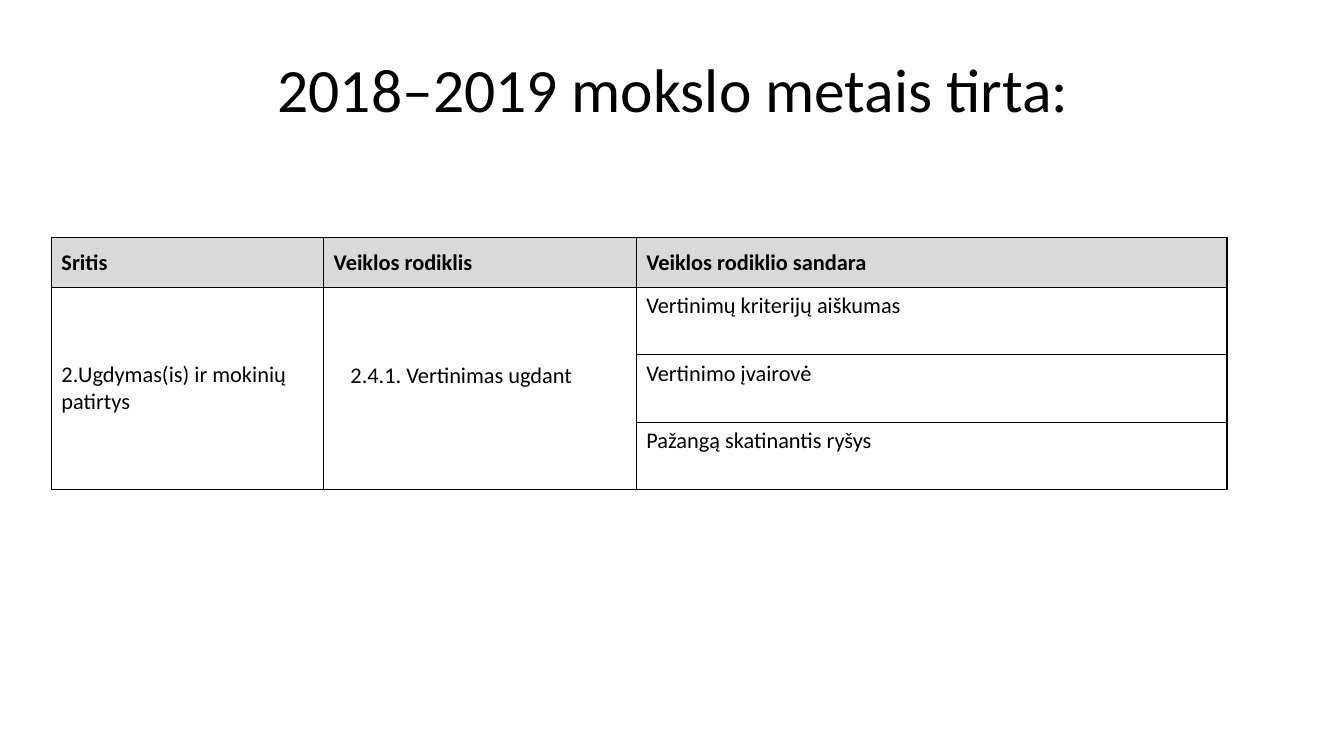
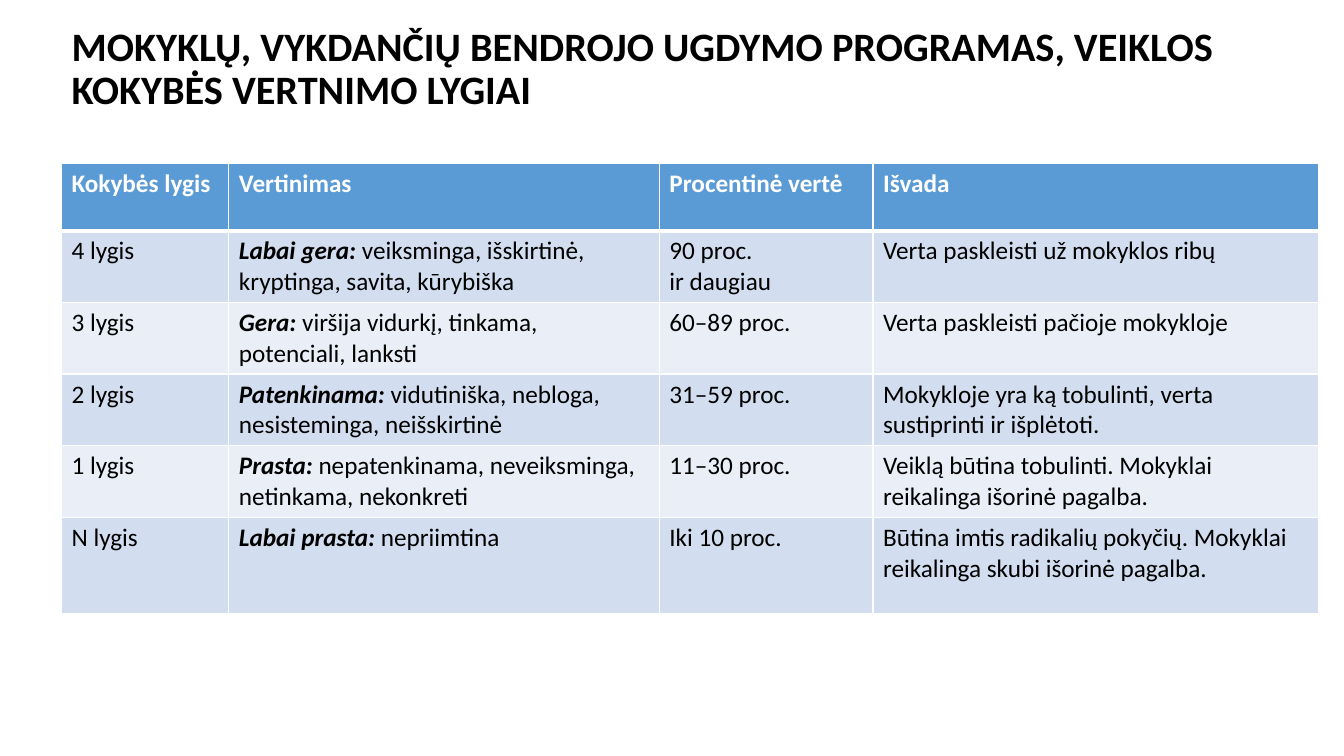
import pptx
import pptx.dml.color
import pptx.enum.text
import pptx.oxml
import pptx.oxml.ns
import pptx.util

Inches = pptx.util.Inches
Pt = pptx.util.Pt
RGB = pptx.dml.color.RGBColor
ALIGN = pptx.enum.text.PP_ALIGN
ANCHOR = pptx.enum.text.MSO_ANCHOR

FONT = "Calibri"
BLACK = RGB(0x00, 0x00, 0x00)
WHITE = RGB(0xFF, 0xFF, 0xFF)
GREY = RGB(0xD9, 0xD9, 0xD9)
BLUE = RGB(0x5B, 0x9B, 0xD5)
BAND_DARK = RGB(0xD2, 0xDE, 0xEF)
BAND_LIGHT = RGB(0xEA, 0xEF, 0xF7)

# A cell is a string, or a (bold italic lead, rest) pair; "\n" starts a paragraph.
STUDIED = {
    "title": "2018–2019 mokslo metais tirta:",
    "title_box": (1.18, 0.4, 11, 1.03),
    "title_size": 44,
    "title_bold": False,
    "title_align": ALIGN.CENTER,
    "corner": (0.51, 2.36),
    "columns": [2.7, 3.1, 5.86],
    "heights": [0.49, 0.67, 0.67, 0.67],
    "size": 16,
    "header_fill": GREY,
    "header_color": BLACK,
    "header_anchor": ANCHOR.MIDDLE,
    "bands": [None],
    "border": BLACK,
    "header_rule": 1,
    "rows": [
        ["Sritis", "Veiklos rodiklis", "Veiklos rodiklio sandara"],
        ["2.Ugdymas(is) ir mokinių patirtys", "2.4.1. Vertinimas ugdant",
         "Vertinimų kriterijų aiškumas"],
        ["", "", "Vertinimo įvairovė"],
        ["", "", "Pažangą skatinantis ryšys"],
    ],
}

LEVELS = {
    "title": "MOKYKLŲ, VYKDANČIŲ BENDROJO UGDYMO PROGRAMAS, VEIKLOS "
             "KOKYBĖS VERTNIMO LYGIAI",
    "title_box": (0.61, 0.17, 11.59, 1.05),
    "title_size": 28.8,
    "title_bold": True,
    "title_align": ALIGN.LEFT,
    "corner": (0.61, 1.62),
    "columns": [1.66, 4.27, 2.12, 4.42],
    "heights": [0.67, 0.71, 0.71, 0.71, 0.71, 0.96],
    "size": 18,
    "header_fill": BLUE,
    "header_color": WHITE,
    "header_anchor": ANCHOR.TOP,
    "bands": [BAND_DARK, BAND_LIGHT],
    "border": WHITE,
    "header_rule": 3,
    "rows": [
        ["Kokybės lygis", "Vertinimas", "Procentinė vertė", "Išvada"],
        ["4 lygis",
         ("Labai gera: ", "veiksminga, išskirtinė, kryptinga, savita, kūrybiška"),
         "90 proc.\nir daugiau", "Verta paskleisti už mokyklos ribų"],
        ["3 lygis", ("Gera: ", "viršija vidurkį, tinkama, potenciali, lanksti"),
         "60–89 proc.", "Verta paskleisti pačioje mokykloje"],
        ["2 lygis",
         ("Patenkinama: ", "vidutiniška, nebloga, nesisteminga, neišskirtinė"),
         "31–59 proc.",
         "Mokykloje yra ką tobulinti, verta sustiprinti ir išplėtoti."],
        ["1 lygis",
         ("Prasta: ", "nepatenkinama, neveiksminga, netinkama, nekonkreti"),
         "11–30 proc.",
         "Veiklą būtina tobulinti. Mokyklai reikalinga išorinė pagalba."],
        ["N lygis", ("Labai prasta: ", "nepriimtina"), "Iki 10 proc.",
         "Būtina imtis radikalių pokyčių. Mokyklai reikalinga skubi "
         "išorinė pagalba."],
    ],
}


def set_font(font, size, color, bold=False, italic=False):
    style = {"name": FONT, "size": Pt(size), "bold": bold, "italic": italic}
    for attribute, value in style.items():
        setattr(font, attribute, value)
    font.color.rgb = color


def add_title(slide, content):
    title = slide.shapes.title
    sides = ("left", "top", "width", "height")
    for side, length in zip(sides, content["title_box"]):
        setattr(title, side, Inches(length))
    frame = title.text_frame
    frame.text = content["title"]
    frame.word_wrap = True
    frame.auto_size = pptx.enum.text.MSO_AUTO_SIZE.NONE
    frame.vertical_anchor = ANCHOR.MIDDLE
    paragraph = frame.paragraphs[0]
    paragraph.alignment = content["title_align"]
    paragraph.line_spacing = 0.9
    set_font(paragraph.runs[0].font, content["title_size"], BLACK,
             content["title_bold"])


def set_borders(cell, color, top, bottom):
    """Draw the cell's edges; call before filling, as the schema orders them."""
    properties = cell._tc.get_or_add_tcPr()
    for edge, width in (("L", 1), ("R", 1), ("T", top), ("B", bottom)):
        properties.append(pptx.oxml.parse_xml(
            f'<a:ln{edge} {pptx.oxml.ns.nsdecls("a")} w="{Pt(width)}">'
            f'<a:solidFill><a:srgbClr val="{color}"/></a:solidFill>'
            f'</a:ln{edge}>'))


def write_cell(cell, text, size, color, bold):
    lead, rest = text if isinstance(text, tuple) else ("", text)
    for number, line in enumerate(rest.split("\n")):
        frame = cell.text_frame
        paragraph = frame.add_paragraph() if number else frame.paragraphs[0]
        if lead:
            run = paragraph.add_run()
            run.text = lead
            set_font(run.font, size, color, bold=True, italic=True)
        if line:
            run = paragraph.add_run()
            run.text = line
            set_font(run.font, size, color, bold)


def add_table(slide, content):
    rows, columns = content["rows"], content["columns"]
    heights, bands = content["heights"], content["bands"]
    box = (*content["corner"], sum(columns), sum(heights))
    table = slide.shapes.add_table(
        len(rows), len(columns), *map(Inches, box)).table
    table.horz_banding = False
    for column, width in zip(table.columns, columns):
        column.width = Inches(width)
    for index, (texts, height) in enumerate(zip(rows, heights)):
        table.rows[index].height = Inches(height)
        header = index == 0
        fill = content["header_fill"] if header else bands[(index - 1) % len(bands)]
        color = content["header_color"] if header else BLACK
        rule = content["header_rule"]
        for cell, text in zip(table.rows[index].cells, texts):
            set_borders(cell, content["border"], rule if index == 1 else 1,
                        rule if header else 1)
            if fill is None:
                cell.fill.background()
            else:
                cell.fill.solid()
                cell.fill.fore_color.rgb = fill
            cell.vertical_anchor = content["header_anchor"] if header else ANCHOR.TOP
            write_cell(cell, text, content["size"], color, header)
    return table


def main():
    presentation = pptx.Presentation()
    presentation.slide_width = Inches(13.33)
    presentation.slide_height = Inches(7.5)
    tables = []
    for content in (STUDIED, LEVELS):
        slide = presentation.slides.add_slide(presentation.slide_layouts[5])
        add_title(slide, content)
        tables.append(add_table(slide, content))

    studied = tables[0]
    for column in (0, 1):
        merged = studied.cell(1, column)
        merged.merge(studied.cell(3, column))
        merged.vertical_anchor = ANCHOR.MIDDLE
    indicator = studied.cell(1, 1)
    indicator.text_frame.paragraphs[0].alignment = ALIGN.CENTER
    indicator.margin_right = Inches(0.47)
    indicator.margin_bottom = Inches(0.31)
    presentation.save("out.pptx")


if __name__ == "__main__":
    main()
